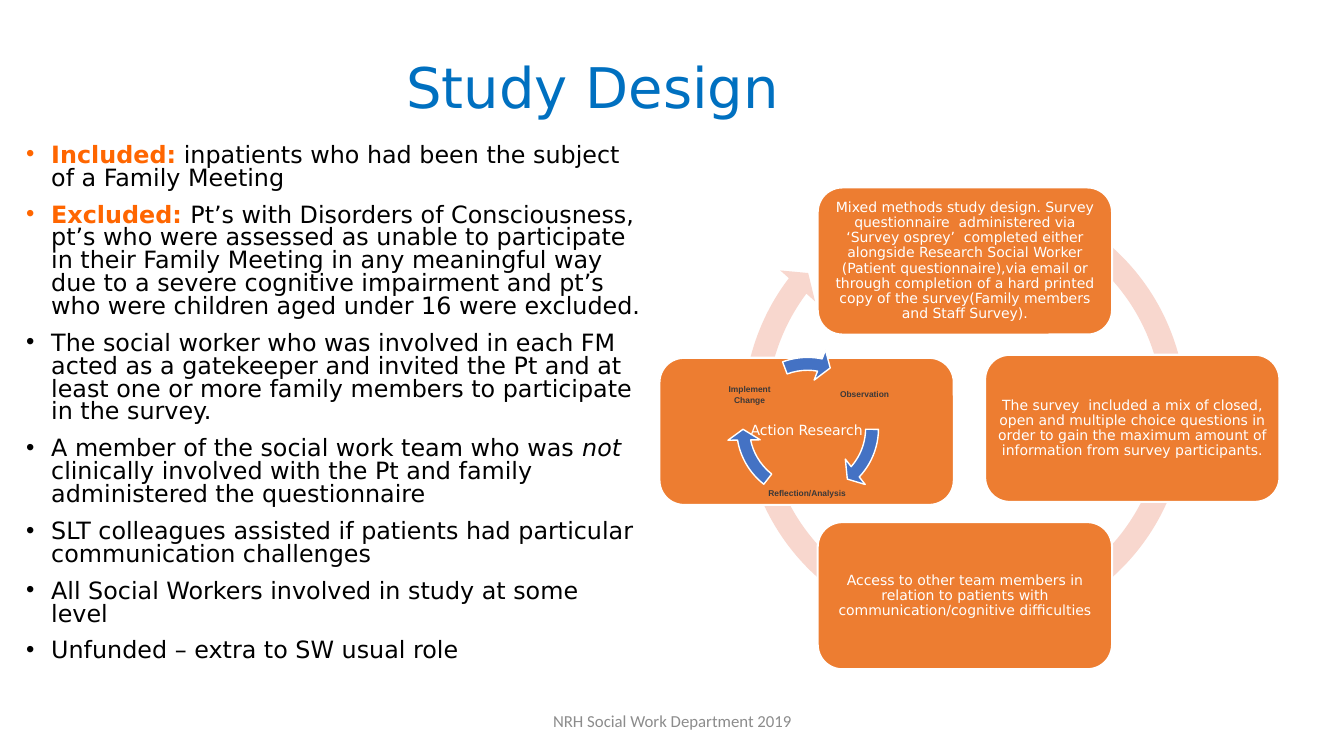
from dataclasses import dataclass
from typing import NamedTuple

import lxml.etree
import pptx
import pptx.dml.color
import pptx.enum.shapes
import pptx.enum.text
import pptx.oxml.ns
import pptx.shapes.autoshape
import pptx.shapes.shapetree
import pptx.text.text
import pptx.util

Inches = pptx.util.Inches
Pt = pptx.util.Pt
Align = pptx.enum.text.PP_ALIGN
Anchor = pptx.enum.text.MSO_ANCHOR
Shape = pptx.enum.shapes.MSO_SHAPE
Shapes = pptx.shapes.shapetree.SlideShapes


@dataclass(frozen=True)
class Theme:
    title: str = "0070C0"
    accent: str = "FF6600"
    body: str = "000000"
    card: str = "ED7D31"
    cycle: str = "F8D7CE"
    ring: str = "4472C4"
    label: str = "3B3838"
    footer: str = "8C8C8C"
    white: str = "FFFFFF"
    font: str = "DejaVu Sans"
    label_font: str = "Arial"
    footer_font: str = "Calibri"
    title_size: float = 40
    body_size: float = 17
    card_size: float = 10
    label_size: float = 6
    footer_size: float = 12


THEME = Theme()


class Box(NamedTuple):
    left: float
    top: float
    width: float
    height: float


class Run(NamedTuple):
    text: str
    color: str = THEME.body
    bold: bool = False
    italic: bool = False


class Card(NamedTuple):
    left: float
    top: float
    text: str


class Label(NamedTuple):
    box: Box
    text: str


class Arrow(NamedTuple):
    head_angle: float
    tail_angle: float


CARD_W, CARD_H = 2.92, 1.46
CYCLE = Box(7.26, 1.78, 4.62, 4.62)
RING = Box(7.21, 3.45, 1.6, 1.6)

CARDS = [
    Card(8.11, 1.86, "Mixed methods study design. Survey questionnaire  administered via "
         "‘Survey osprey’  completed either alongside Research Social Worker "
         "(Patient questionnaire),via email or through completion of a hard printed "
         "copy of the survey(Family members and Staff Survey)."),
    Card(9.77, 3.52, "The survey  included a mix of closed, open and multiple choice "
         "questions in order to gain the maximum amount of information from survey "
         "participants."),
    Card(8.11, 5.18, "Access to other team members in relation to patients with "
         "communication/cognitive difficulties"),
    Card(6.54, 3.55, "Action Research"),
]

RING_LABELS = [
    Label(Box(8.24, 3.58, 0.67, 0.67), "Observation"),
    Label(Box(7.6, 4.56, 0.81, 0.67), "Reflection/Analysis"),
    Label(Box(7.1, 3.58, 0.67, 0.67), "Implement Change"),
]
RING_ARROWS = [Arrow(25.4, 0.5), Arrow(101.74, 76.85), Arrow(168.59, 149.66)]

BULLETS = [
    [Run("Included:", THEME.accent, bold=True),
     Run(" inpatients who had been the subject of a Family Meeting")],
    [Run("Excluded: ", THEME.accent, bold=True),
     Run("Pt’s with Disorders of Consciousness, pt’s who were assessed as unable to "
         "participate in their Family Meeting in any meaningful way due to a severe "
         "cognitive impairment and pt’s who were children aged under 16 were excluded.")],
    [Run("The social worker who was involved in each FM acted as a gatekeeper and invited "
         "the Pt and at least one or more family members to participate in the survey.")],
    [Run("A member of the social work team who was "), Run("not", italic=True),
     Run(" clinically involved with the Pt and family administered the questionnaire")],
    [Run("SLT colleagues assisted if patients had particular communication challenges")],
    [Run("All Social Workers involved in study at some level")],
    [Run("Unfunded – extra to SW usual role")],
]


def rgb(color: str) -> pptx.dml.color.RGBColor:
    return pptx.dml.color.RGBColor.from_string(color)


def write(tf: pptx.text.text.TextFrame, paragraphs: list[list[Run]], *, size: float,
          font: str = THEME.font, align: Align = Align.LEFT, anchor: Anchor = Anchor.MIDDLE,
          spacing: float = 1.0, before: float = 0, bullet: str = "",
          margins: tuple[float, float, float, float] = (0.1, 0.05, 0.1, 0.05)) -> None:
    tf.word_wrap = True
    tf.vertical_anchor = anchor
    tf.margin_left, tf.margin_top, tf.margin_right, tf.margin_bottom = map(Inches, margins)
    for i, runs in enumerate(paragraphs):
        p = tf.add_paragraph() if i else tf.paragraphs[0]
        if bullet:
            ppr = p._p.get_or_add_pPr()
            ppr.set("marL", str(Inches(0.25)))
            ppr.set("indent", str(Inches(-0.25)))
            qn = pptx.oxml.ns.qn
            lxml.etree.SubElement(ppr, qn("a:buFont"), typeface=THEME.label_font)
            lxml.etree.SubElement(ppr, qn("a:buChar"), char=bullet)
        p.alignment = align
        p.line_spacing = spacing
        p.space_before = Pt(before if i else 0)
        for run in runs:
            r = p.add_run()
            r.text = run.text
            r.font.name = font
            r.font.size = Pt(size)
            r.font.bold = run.bold
            r.font.italic = run.italic
            r.font.color.rgb = rgb(run.color)


def add_text(shapes: Shapes, box: Box) -> pptx.text.text.TextFrame:
    return shapes.add_textbox(*map(Inches, box)).text_frame


def add_block(shapes: Shapes, kind: Shape, box: Box, fill: str,
              line_width: float = 0) -> pptx.shapes.autoshape.Shape:
    sp = shapes.add_shape(kind, *map(Inches, box))
    sp.shadow.inherit = False
    sp.fill.solid()
    sp.fill.fore_color.rgb = rgb(fill)
    if line_width:
        sp.line.color.rgb = rgb(THEME.white)
        sp.line.width = Pt(line_width)
    else:
        sp.line.fill.background()
    return sp


def add_arrow(shapes: Shapes, box: Box, arrow: Arrow, fill: str, *, thickness: float,
              head_sweep: float, head_size: float, line_width: float = 0) -> None:
    sp = add_block(shapes, Shape.CIRCULAR_ARROW, box, fill, line_width)
    values = (thickness, head_sweep, arrow.head_angle, arrow.tail_angle, head_size)
    for i, value in enumerate(values):
        sp.adjustments[i] = value


def add_card(shapes: Shapes, card: Card) -> None:
    box = Box(card.left, card.top, CARD_W, CARD_H)
    sp = add_block(shapes, Shape.ROUNDED_RECTANGLE, box, THEME.card, 1.5)
    write(sp.text_frame, [[Run(card.text, THEME.white)]], size=THEME.card_size,
          align=Align.CENTER, spacing=0.9, margins=(0.04, 0.04, 0.04, 0.04))


def add_label(shapes: Shapes, label: Label) -> None:
    write(add_text(shapes, label.box), [[Run(label.text, THEME.label, bold=True)]],
          size=THEME.label_size, font=THEME.label_font, align=Align.CENTER,
          margins=(0.01, 0.01, 0.01, 0.01))


def main() -> None:
    prs = pptx.Presentation()
    prs.slide_width, prs.slide_height = Inches(13.33), Inches(7.5)
    s = prs.slides.add_slide(prs.slide_layouts[6])

    write(add_text(s.shapes, Box(2.87, 0.35, 6.82, 0.9)),
          [[Run("Study Design", THEME.title)]], size=THEME.title_size,
          anchor=Anchor.BOTTOM, spacing=0.9, margins=(1.16, 0.05, 0.1, 0.05))
    add_arrow(s.shapes, CYCLE, Arrow(130.25, 179), THEME.cycle,
              thickness=0.05, head_sweep=2.73, head_size=0.05)
    for card in CARDS:
        add_card(s.shapes, card)
    write(add_text(s.shapes, Box(0.16, 1.39, 6.3, 5.91)), BULLETS, size=THEME.body_size,
          anchor=Anchor.TOP, spacing=0.8, before=10, bullet="•")
    for label, arrow in zip(RING_LABELS, RING_ARROWS):
        add_label(s.shapes, label)
        add_arrow(s.shapes, RING, arrow, THEME.ring, thickness=0.08,
                  head_sweep=5.76, head_size=0.1, line_width=1)
    write(add_text(s.shapes, Box(4.42, 6.95, 4.5, 0.4)),
          [[Run("NRH Social Work Department 2019", THEME.footer)]],
          size=THEME.footer_size, font=THEME.footer_font, align=Align.CENTER)
    prs.save("out.pptx")


if __name__ == "__main__":
    main()
